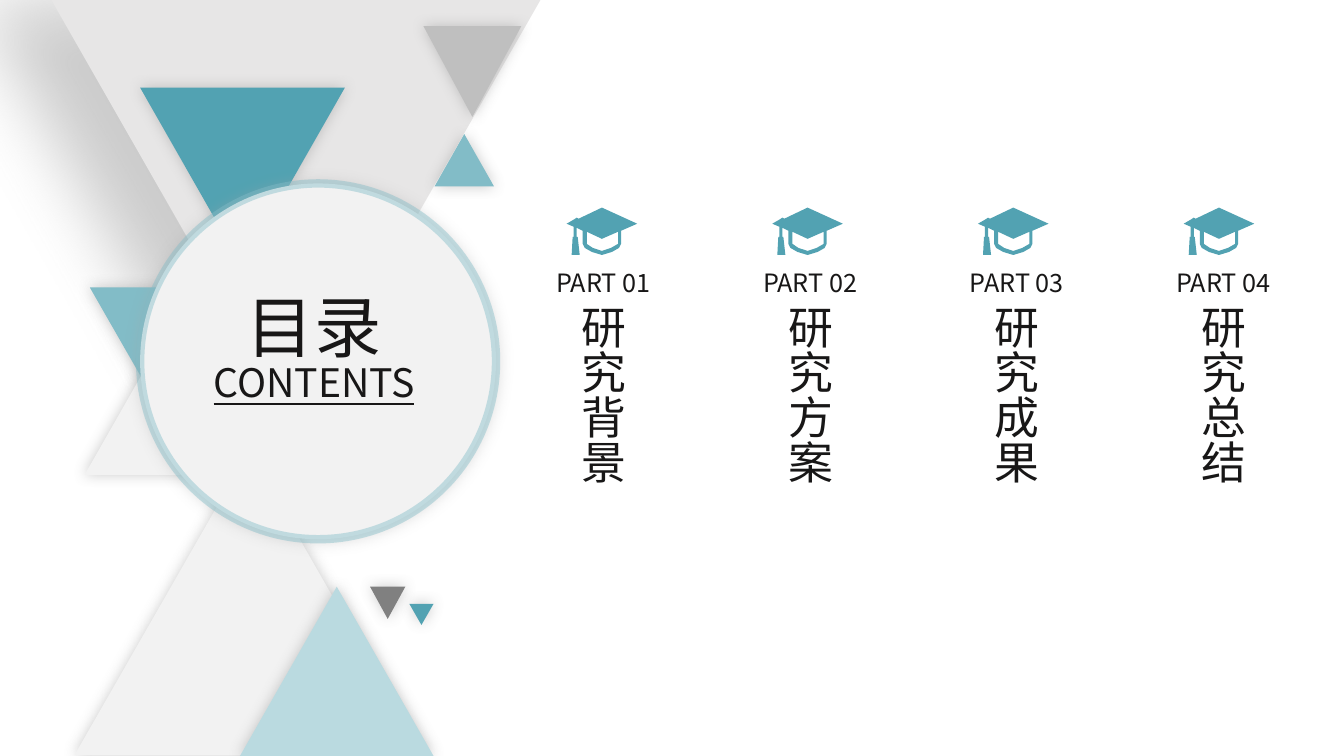
from lxml.etree import SubElement
from pptx import Presentation
from pptx.dml.color import RGBColor
from pptx.enum.shapes import MSO_SHAPE
from pptx.enum.text import PP_ALIGN
from pptx.oxml.ns import qn
from pptx.util import Inches, Pt

deck = Presentation()
deck.slide_width = Inches(13.33)
deck.slide_height = Inches(7.5)
slide = deck.slides.add_slide(deck.slide_layouts[6])
shapes = slide.shapes

FONT = "Noto Sans CJK SC"
INK = "181717"
TEAL = "52A2B2"
MID = "82BCC7"
PALE = "F2F2F2"


def paint(shape, fill, shade=None, blur=10, dist=0):
    shape.fill.solid()
    shape.fill.fore_color.rgb = RGBColor.from_string(fill)
    shape.line.fill.background()
    shape.shadow.inherit = False
    if shade:
        effects = shape._element.spPr.find(qn("a:effectLst"))
        outer = SubElement(effects, qn("a:outerShdw"), blurRad=str(Pt(blur)),
                           dist=str(Pt(dist)), dir="10800000", algn="ctr", rotWithShape="0")
        color = SubElement(outer, qn("a:srgbClr"), val=shade)
        SubElement(color, qn("a:alpha"), val="40000")


def write(text, box, sizes, align=PP_ALIGN.CENTER, upright=False, space=None):
    frame = shapes.add_textbox(*map(Inches, box)).text_frame
    frame.word_wrap = True
    if upright:
        frame._txBody.bodyPr.set("vert", "eaVert")
    frame.text = text
    for para, size in zip(frame.paragraphs, sizes):
        para.alignment = align
        para.line_spacing = space
        run = para.runs[0]
        run.font.size = Pt(size)
        run.font.name = FONT
        run.font.color.rgb = RGBColor.from_string(INK)
        SubElement(run._r.get_or_add_rPr(), qn("a:ea"), typeface=FONT)
    return frame


triangles = [
    (0.51, 0, 4.85, 4.24, 180, "E7E6E6", 53, 55),
    (0.74, 4.47, 3.46, 3.02, 0, PALE, 10, 0),
    (2.38, 5.82, 1.92, 1.68, 0, "BADAE0", 10, 0),
    (4.31, 1.33, 0.59, 0.52, 0, MID, 10, 0),
    (0.89, 2.85, 1.26, 1.1, 180, MID, 10, 0),
    (4.06, 5.99, 0.24, 0.21, 180, TEAL, 10, 0),
    (1.39, 0.87, 2.03, 1.78, 180, TEAL, 10, 0),
    (3.67, 5.82, 0.35, 0.32, 180, "808080", 10, 0),
    (4.2, 0.26, 0.97, 0.9, 180, "BFBFBF", 10, 0),
    (0.84, 3.43, 1.46, 1.28, 0, PALE, 10, 0),
]
for left, top, width, height, turn, fill, blur, dist in triangles:
    shape = shapes.add_shape(MSO_SHAPE.ISOSCELES_TRIANGLE, Inches(left), Inches(top),
                             Inches(width), Inches(height))
    shape.rotation = turn
    paint(shape, fill, "808080", blur, dist)

disc = shapes.add_shape(MSO_SHAPE.OVAL, Inches(1.39), Inches(1.82), Inches(3.53), Inches(3.53))
paint(disc, PALE, "A6A6A6")
disc.line.color.rgb = RGBColor.from_string(MID)
disc.line.width = Pt(6)
tint = disc.line._ln.find(".//" + qn("a:srgbClr"))
SubElement(tint, qn("a:alpha"), val="43000")

title = write("目录\nCONTENTS", (1.93, 2.9, 2.37, 1.39), (48, 28), space=0.85)
title.paragraphs[1].runs[0].font.underline = True

cap = [(0.7, 0.16), (0.35, 0), (0.12, 0.11), (0.1, 0.1), (0.07, 0.12), (0, 0.16),
       (0.07, 0.19), (0.07, 0.29), (0.06, 0.29), (0.05, 0.47), (0.13, 0.47),
       (0.11, 0.29), (0.1, 0.29), (0.1, 0.2), (0.16, 0.23), (0.16, 0.36),
       (0.18, 0.4), (0.25, 0.44), (0.35, 0.47), (0.45, 0.44), (0.52, 0.4),
       (0.54, 0.36), (0.54, 0.23)]
gap = [(0.51, 0.36), (0.44, 0.4), (0.35, 0.43), (0.26, 0.4), (0.2, 0.36),
       (0.2, 0.24), (0.35, 0.31), (0.51, 0.24)]

for i, topic in enumerate(["研究背景", "研究方案", "研究成果", "研究总结"]):
    shift = 2.05 * i
    write(topic, (5.55 + shift, 2.93, 0.74, 2.12), [32], PP_ALIGN.JUSTIFY, True)
    write(f"PART {i + 1:02}", (5.08 + shift, 2.6, 1.81, 0.4), [18])
    pen = shapes.build_freeform(Inches(cap[0][0]), Inches(cap[0][1]))
    pen.add_line_segments([(Inches(x), Inches(y)) for x, y in cap[1:]])
    pen.move_to(Inches(gap[0][0]), Inches(gap[0][1]))
    pen.add_line_segments([(Inches(x), Inches(y)) for x, y in gap[1:]])
    icon = pen.convert_to_shape(Inches(5.62 + 2.04 * i), Inches(2.06))
    paint(icon, TEAL)

deck.save("out.pptx")
